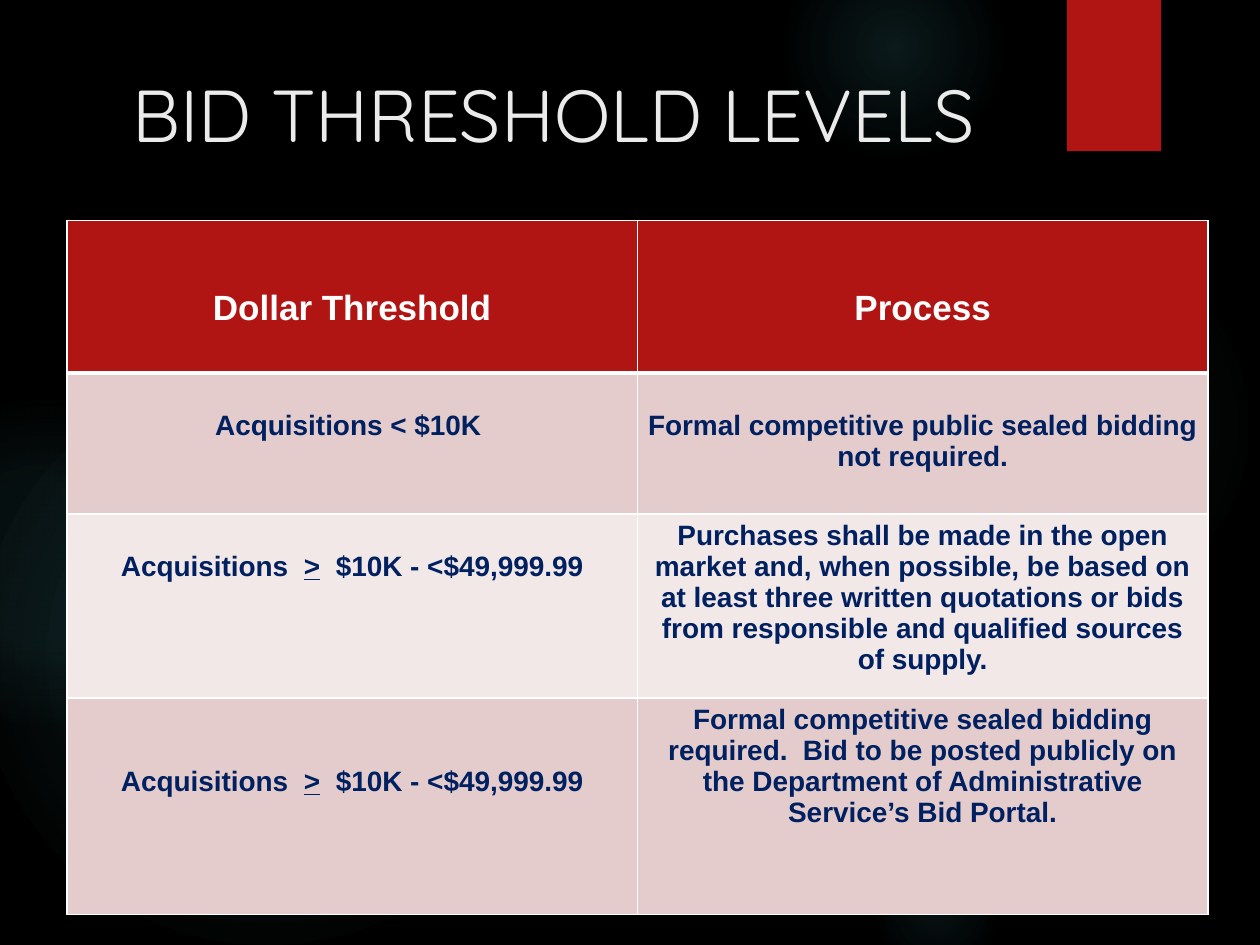
"""Build the bid threshold levels slide."""
from dataclasses import dataclass

from pptx import Presentation
from pptx.dml.color import RGBColor
from pptx.enum.shapes import MSO_SHAPE as Preset
from pptx.enum.text import MSO_ANCHOR as Anchor, MSO_AUTO_SIZE as AutoSize, PP_ALIGN as Align
from pptx.oxml import parse_xml
from pptx.oxml.ns import nsdecls, qn
from pptx.util import Cm, Pt


@dataclass(frozen=True)
class Theme:
    """Colours, fonts and type sizes."""
    background: str = "000000"
    accent: str = "B01513"
    glow: str = "50B9C1"
    title: str = "EBEBEB"
    white: str = "FFFFFF"
    navy: str = "002060"
    bands: tuple = ("E4CCCC", "F2E8E7")
    title_font: str = "Quicksand"
    table_font: str = "Arial"
    title_size: int = 42
    header_size: int = 20
    body_size: int = 16


@dataclass(frozen=True)
class Glow:
    """A soft round light: place, diameter and (position, opacity) stops."""
    left: float
    top: float
    diameter: float
    stops: tuple


@dataclass(frozen=True)
class Row:
    """A table row: height, cell texts and lines of space above each text."""
    height: float
    texts: tuple
    lines_above: tuple


THEME = Theme()
LINE_HEIGHT = 0.62
ACQUISITIONS_RANGE = "Acquisitions  >  $10K - <$49,999.99"
GLOWS = (
    Glow(17.5, 4.65, 7.82, ((0, 7), (36, 6), (69, 0))),
    Glow(15.8, -1.27, 4.45, ((0, 14), (36, 7), (73, 0))),
    Glow(17.5, 16.94, 2.74, ((0, 9), (36, 5), (66, 0))),
    Glow(-0.43, 7.42, 11.63, ((0, 11), (36, 10), (75, 0))),
    Glow(-2.34, 8.05, 6.55, ((0, 8), (36, 8), (72, 0))),
)
ROWS = (
    Row(3.07, ("Dollar Threshold", "Process"), (2, 2)),
    Row(2.84, ("Acquisitions < $10K ",
               "Formal competitive public sealed bidding not required."), (1, 1)),
    Row(3.71, (ACQUISITIONS_RANGE,
               "Purchases shall be made in the open market and, when possible, be based on "
               "at least three written quotations or bids from responsible and qualified "
               "sources of supply."), (1, 0)),
    Row(4.37, (ACQUISITIONS_RANGE,
               "Formal competitive sealed bidding required.  Bid to be posted publicly on "
               "the Department of Administrative Service’s Bid Portal."), (2, 0)),
)


def apply(target, values: dict) -> None:
    """Set each attribute in values on target."""
    for name, value in values.items():
        setattr(target, name, value)


def format_font(font, name: str, size: int, color: str, **values) -> None:
    """Give a font its name, size, colour and further values."""
    apply(font, {"name": name, "size": Pt(size), **values})
    font.color.rgb = RGBColor.from_string(color)


def set_fill(fill, color: str) -> None:
    """Make a fill solid in one colour."""
    fill.solid()
    fill.fore_color.rgb = RGBColor.from_string(color)


def add_plain_shape(slide, preset, left: float, top: float, width: float, height: float):
    """Add a shape without line or shadow."""
    shape = slide.shapes.add_shape(preset, Cm(left), Cm(top), Cm(width), Cm(height))
    shape.shadow.inherit = False
    shape.line.fill.background()
    return shape


def draw_glow(slide, glow: Glow) -> None:
    """Draw a circle that fades out from its centre."""
    shape = add_plain_shape(slide, Preset.OVAL, glow.left, glow.top, glow.diameter, glow.diameter)
    shape.fill.background()
    stops = "".join(
        f'<a:gs pos="{position * 1000}"><a:srgbClr val="{THEME.glow}">'
        f'<a:alpha val="{opacity * 1000}"/></a:srgbClr></a:gs>'
        for position, opacity in glow.stops)
    gradient = parse_xml(
        f'<a:gradFill {nsdecls("a")}><a:gsLst>{stops}</a:gsLst><a:path path="circle">'
        '<a:fillToRect l="50000" t="50000" r="50000" b="50000"/></a:path></a:gradFill>')
    properties = shape._element.spPr
    properties.replace(properties.find(qn("a:noFill")), gradient)


def place_title(slide, text: str) -> None:
    """Fill the title placeholder and bring it to the front."""
    title = slide.shapes.title
    apply(title, {"left": Cm(1.35), "top": Cm(1.27), "width": Cm(19.61), "height": Cm(3.89)})
    apply(title.text_frame, {"text": text, "word_wrap": True, "auto_size": AutoSize.NONE,
                             "vertical_anchor": Anchor.TOP})
    paragraph = title.text_frame.paragraphs[0]
    paragraph.alignment = Align.CENTER
    format_font(paragraph.runs[0].font, THEME.title_font, THEME.title_size, THEME.title)
    slide.shapes._spTree.append(title._element)


def set_borders(cell, top: int, bottom: int) -> None:
    """Give a cell white borders, with widths in points."""
    properties = cell._tc.get_or_add_tcPr()
    for index, (side, width) in enumerate({"L": 1, "R": 1, "T": top, "B": bottom}.items()):
        properties.insert(index, parse_xml(
            f'<a:ln{side} {nsdecls("a")} w="{Pt(width)}"><a:solidFill>'
            f'<a:srgbClr val="{THEME.white}"/></a:solidFill></a:ln{side}>'))


def fill_cell(cell, text: str, lines_above: int, row_index: int) -> None:
    """Write and format one cell, with its > sign underlined."""
    header = row_index == 0
    apply(cell, {"margin_left": Cm(0.2), "margin_right": Cm(0.2), "margin_bottom": Cm(0.13),
                 "margin_top": Cm(0.13 + lines_above * LINE_HEIGHT),
                 "vertical_anchor": Anchor.TOP})
    set_fill(cell.fill, THEME.accent if header else THEME.bands[(row_index - 1) % 2])
    set_borders(cell, top=3 if row_index == 1 else 1, bottom=3 if header else 1)
    paragraph = cell.text_frame.paragraphs[0]
    paragraph.alignment = Align.CENTER
    for part in filter(None, text.partition(">")):
        run = paragraph.add_run()
        run.text = part
        format_font(run.font, THEME.table_font,
                    THEME.header_size if header else THEME.body_size,
                    THEME.white if header else THEME.navy,
                    bold=True, underline=part == ">")


def draw_table(slide, rows: tuple) -> None:
    """Draw the threshold table."""
    columns = len(rows[0].texts)
    height = sum(row.height for row in rows)
    table = slide.shapes.add_table(
        len(rows), columns, Cm(1.35), Cm(4.45), Cm(23), Cm(height)).table
    for row_index, row in enumerate(rows):
        table.rows[row_index].height = Cm(row.height)
        for column, (text, lines) in enumerate(zip(row.texts, row.lines_above)):
            fill_cell(table.cell(row_index, column), text, lines, row_index)


def main() -> None:
    """Build and save the presentation."""
    presentation = Presentation()
    apply(presentation, {"slide_width": Cm(25.4), "slide_height": Cm(19.05)})
    slide = presentation.slides.add_slide(presentation.slide_layouts.get_by_name("Title Only"))
    set_fill(slide.background.fill, THEME.background)
    for glow in GLOWS:
        draw_glow(slide, glow)
    ribbon = add_plain_shape(slide, Preset.RECTANGLE, 21.51, 0, 1.9, 3.05)
    set_fill(ribbon.fill, THEME.accent)
    place_title(slide, "BID THRESHOLD LEVELS")
    draw_table(slide, ROWS)
    presentation.save("out.pptx")


if __name__ == "__main__":
    main()
